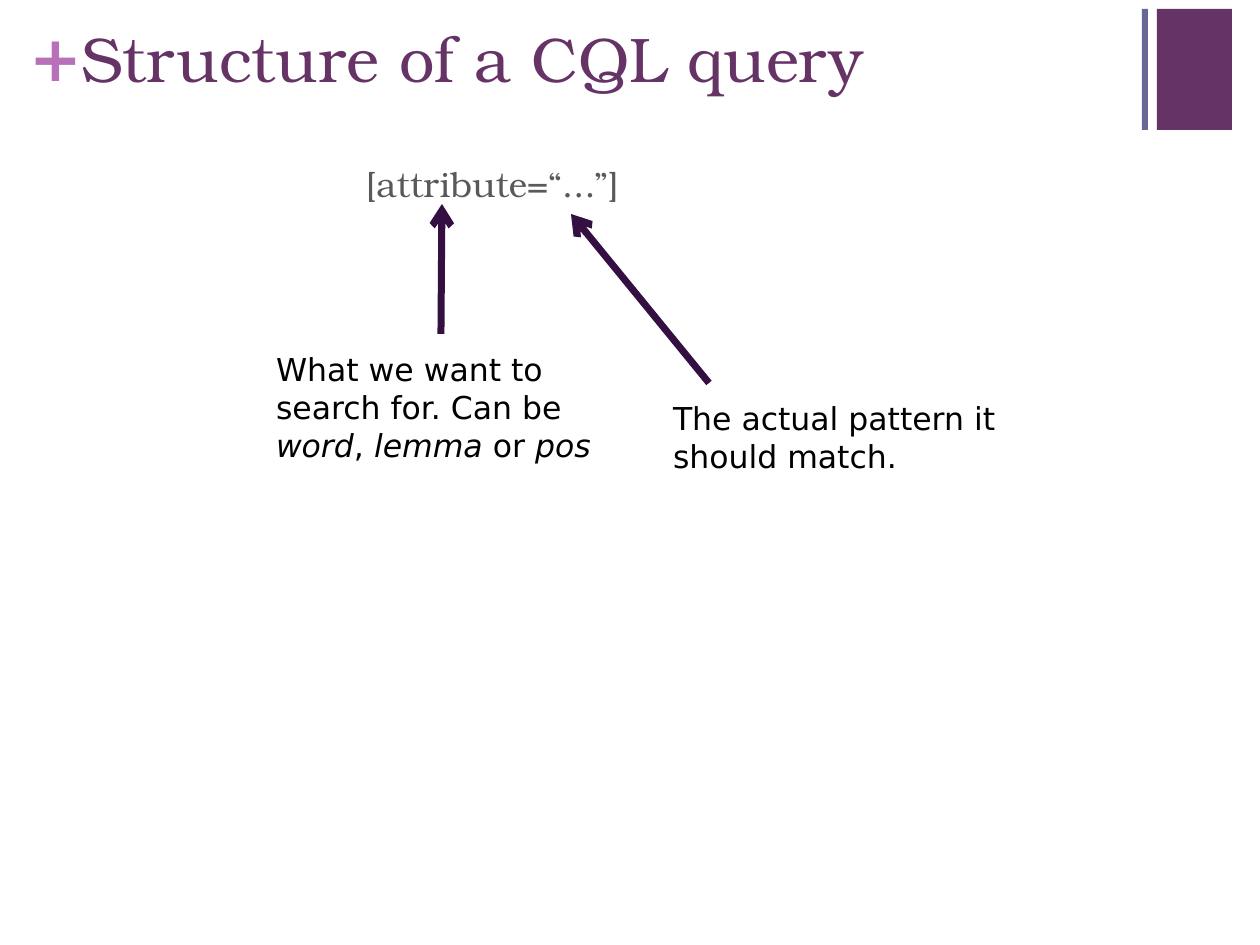
from pptx import Presentation
from pptx.dml.color import RGBColor
from pptx.enum.shapes import MSO_CONNECTOR as CONNECTOR, MSO_SHAPE as SHAPE
from pptx.enum.text import MSO_ANCHOR as ANCHOR
from pptx.oxml.ns import qn
from pptx.util import Pt
from lxml.etree import SubElement

PX = 914400 // 126
PURPLE = RGBColor(0x66, 0x33, 0x66)
ORCHID = RGBColor(0xB8, 0x70, 0xB8)
SLATE = RGBColor(0x66, 0x66, 0x99)
GRAY = RGBColor(0x59, 0x59, 0x59)
PLUM = RGBColor(0x33, 0x0F, 0x42)
BLACK = RGBColor(0, 0, 0)
SANS = "DejaVu Sans"
SERIF = "TeX Gyre Bonum"


def px(*lengths):
    """Turn pixel lengths into EMU."""
    return [length * PX for length in lengths]


def add_text(slide, box, *pieces, size=18, font=SANS, color=BLACK,
             bold=False, inset=(13, 6), indent=0, wrap=True):
    """Add a paragraph of strings, where a (string,) tuple is italic."""
    shape = slide.shapes.add_textbox(*px(*box))
    frame = shape.text_frame
    frame.word_wrap = wrap
    frame.vertical_anchor = ANCHOR.TOP
    frame.margin_left = frame.margin_right = inset[0] * PX
    frame.margin_top = frame.margin_bottom = inset[1] * PX
    paragraph = frame.paragraphs[0]
    if indent:
        paragraph._p.get_or_add_pPr().set("marL", str(indent * PX))
    for piece in pieces:
        run = paragraph.add_run()
        italic = isinstance(piece, tuple)
        run.text = piece[0] if italic else piece
        run.font.size = Pt(size)
        run.font.name = font
        run.font.bold = bold
        run.font.italic = italic
        run.font.color.rgb = color
    return shape


def add_block(slide, box, color):
    """Add a plain filled rectangle."""
    shape = slide.shapes.add_shape(SHAPE.RECTANGLE, *px(*box))
    shape.shadow.inherit = False
    shape.fill.solid()
    shape.fill.fore_color.rgb = color
    shape.line.fill.background()


def add_arrow(slide, start, end):
    """Add a thick straight arrow from start to end."""
    connector = slide.shapes.add_connector(
        CONNECTOR.STRAIGHT, *px(*start, *end))
    connector.line.color.rgb = PLUM
    connector.line.width = Pt(4)
    line = connector.line._get_or_add_ln()
    SubElement(line, qn("a:tailEnd"), type="arrow")
    SubElement(connector._element.spPr, qn("a:effectLst"))


def add_header(slide, left, top, width, height):
    """Add the plus sign, the title and the corner bars."""
    add_block(slide, (left + width - 75, top, 75, height), PURPLE)
    add_block(slide, (left + width - 90, top, 6, height), SLATE)
    add_text(slide, (left, top + 10, 37, 77), "+", size=36, color=ORCHID,
             bold=True, inset=(0, 0), wrap=False)
    add_text(slide, (left + 39, top + 5, 1074, 116),
             "Structure of a CQL query", size=36, font=SERIF, color=PURPLE)


def add_query_diagram(slide, left, top, width, height):
    """Add the query pattern with an arrow and a note for each part."""
    add_text(slide, (left, top, width, height), "[attribute=“...”]",
             size=20, font=SERIF, color=GRAY, indent=284)
    add_arrow(slide, (left + 372, top + 178), (left + 373, top + 48))
    add_arrow(slide, (left + 640, top + 227), (left + 502, top + 58))
    add_text(slide, (left + 194, top + 188, 387, 127),
             "What we want to search for. Can be ", ("word",), ", ",
             ("lemma",), " or ", ("pos",))
    add_text(slide, (left + 591, top + 237, 387, 89),
             "The actual pattern it should match.")


def main():
    """Build and save the slide."""
    presentation = Presentation()
    presentation.slide_width, presentation.slide_height = px(1260, 945)
    slide = presentation.slides.add_slide(presentation.slide_layouts[6])
    add_header(slide, 30, 9, 1202, 121)
    add_query_diagram(slide, 69, 156, 1164, 751)
    presentation.save("out.pptx")


if __name__ == "__main__":
    main()
